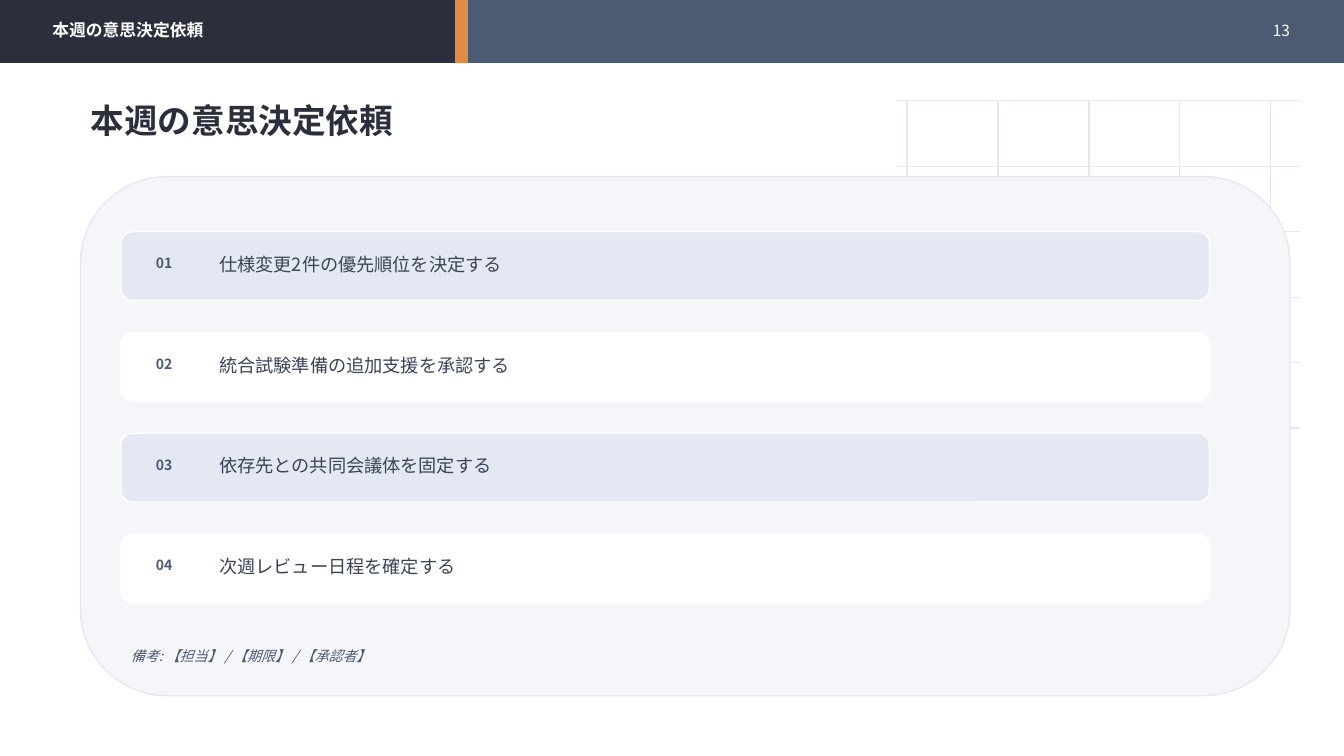
import dataclasses

import pptx
import pptx.dml.color
import pptx.enum.shapes
import pptx.enum.text
import pptx.oxml.ns
import pptx.util
from lxml import etree
from pptx.util import Cm


@dataclasses.dataclass(frozen=True)
class Theme:
    font: str = "Noto Sans CJK JP"
    dark: str = "2A2F3B"
    slate: str = "4C5A74"
    accent: str = "E28B45"
    body: str = "3A4457"
    mist: str = "E3E8F2"
    panel: str = "F4F6FA"
    white: str = "FFFFFF"
    title_size: int = 24
    item_size: int = 13
    header_size: int = 12
    page_size: int = 11
    small_size: int = 10


theme = Theme()
color = pptx.dml.color.RGBColor.from_string
qn = pptx.oxml.ns.qn
kinds = pptx.enum.shapes.MSO_SHAPE
align = pptx.enum.text.PP_ALIGN

presentation = pptx.Presentation()
presentation.slide_width = Cm(33.87)
presentation.slide_height = Cm(19.05)
slide = presentation.slides.add_slide(presentation.slide_layouts[5])
shapes = slide.shapes


def add_text(text, left, top, width, height, *, size, ink, bold=False,
             italic=False, alignment=align.LEFT, shape=None):
    """Write one line of text in a new text box, or in the given shape."""
    box = (Cm(left), Cm(top), Cm(width), Cm(height))
    if shape is None:
        shape = shapes.add_textbox(*box)
    shape.left, shape.top, shape.width, shape.height = box
    frame = shape.text_frame
    frame.word_wrap = True
    frame.auto_size = pptx.enum.text.MSO_AUTO_SIZE.NONE
    frame.vertical_anchor = pptx.enum.text.MSO_ANCHOR.MIDDLE
    paragraph = frame.paragraphs[0]
    paragraph.alignment = alignment
    run = paragraph.add_run()
    run.text = text
    run.font.size = pptx.util.Pt(size)
    run.font.bold = bold
    run.font.italic = italic
    run.font.color.rgb = color(ink)
    run.font.name = theme.font
    # Japanese glyphs take the East Asian typeface
    east_asian = etree.SubElement(run.font._element, qn("a:ea"))
    east_asian.set("typeface", theme.font)


def add_block(kind, left, top, width, height, fill, line):
    shape = shapes.add_shape(kind, Cm(left), Cm(top), Cm(width), Cm(height))
    shape.shadow.inherit = False
    shape.fill.solid()
    shape.fill.fore_color.rgb = color(fill)
    shape.line.color.rgb = color(line)
    shape.line.width = pptx.util.Pt(1)


# Background grid: six horizontal and five vertical lines
grid_lines = [(22.61, 2.54 + 1.65 * row, 32.77, 2.54 + 1.65 * row)
              for row in range(6)]
grid_lines += [(22.86 + 2.29 * column, 2.54, 22.86 + 2.29 * column, 10.67)
               for column in range(5)]
for ends in grid_lines:
    connector = shapes.add_connector(
        pptx.enum.shapes.MSO_CONNECTOR.STRAIGHT, *map(Cm, ends))
    connector.line.color.rgb = color(theme.mist)
    connector.line.width = pptx.util.Pt(1)
    etree.SubElement(connector._element.spPr, qn("a:effectLst"))

# Header band
for left, width, fill in [(0, 33.87, theme.slate), (0, 11.68, theme.dark),
                          (11.48, 0.3, theme.accent)]:
    add_block(kinds.RECTANGLE, left, 0, width, 1.57, fill, fill)
add_text("本週の意思決定依頼", 1.07, 0.43, 22.35, 0.66,
         size=theme.header_size, ink=theme.white, bold=True)
add_text("13", 30.86, 0.43, 1.9, 0.66,
         size=theme.page_size, ink=theme.white, alignment=align.RIGHT)

# Title
add_text("本週の意思決定依頼", 2.03, 2.41, 28.96, 1.22, size=theme.title_size,
         ink=theme.dark, bold=True, shape=shapes.title)

# Panel with the decision rows
add_block(kinds.ROUNDED_RECTANGLE, 2.03, 4.45, 30.48, 13.08,
          theme.panel, theme.mist)
decisions = [
    "仕様変更2件の優先順位を決定する",
    "統合試験準備の追加支援を承認する",
    "依存先との共同会議体を固定する",
    "次週レビュー日程を確定する",
]
for index, decision in enumerate(decisions):
    top = 5.84 + 2.54 * index
    fill = theme.white if index % 2 else theme.mist
    add_block(kinds.ROUNDED_RECTANGLE, 3.05, top, 27.43, 1.73,
              fill, theme.white)
    add_text(f"{index + 1:02}", 3.68, top + 0.53, 1.12, 0.51,
             size=theme.small_size, ink=theme.slate, bold=True)
    add_text(decision, 5.28, top + 0.51, 24.38, 0.61,
             size=theme.item_size, ink=theme.body)

# Note
add_text("備考: 【担当】 / 【期限】 / 【承認者】", 3.05, 16.26, 17.27, 0.56,
         size=theme.small_size, ink=theme.slate, italic=True)

presentation.save("out.pptx")
